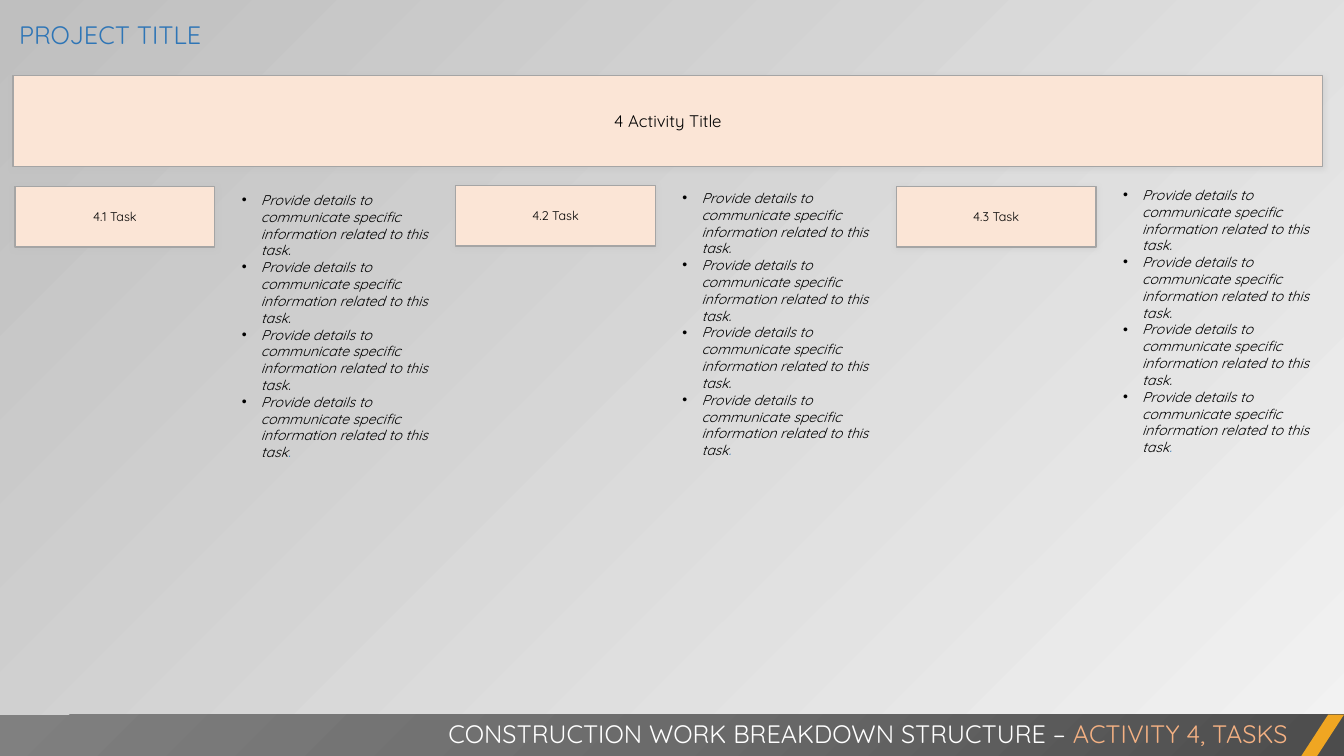
from lxml.etree import SubElement
from pptx import Presentation
from pptx.dml.color import RGBColor as RGB
from pptx.enum.shapes import MSO_SHAPE as Kind
from pptx.enum.text import MSO_ANCHOR as Anchor, MSO_AUTO_SIZE as Auto, PP_ALIGN as Align
from pptx.oxml import parse_xml
from pptx.oxml.ns import nsdecls, qn
from pptx.util import Inches, Pt

# Content
TITLE = "PROJECT TITLE"
ACTIVITY = "4 Activity Title"
DETAIL = "Provide details to communicate specific information related to this task"
COUNT = 4
TASKS = [  # label, box top, detail top
    ("4.1 Task", 1.85, 1.85),
    ("4.2 Task", 1.84, 1.83),
    ("4.3 Task", 1.85, 1.80),
]
FOOTER = [("CONSTRUCTION WORK BREAKDOWN STRUCTURE – ", "white"),
          ("ACTIVITY 4, TASKS", "peach")]

FONT = "Quicksand"
COLORS = {
    "black": "000000", "white": "FFFFFF", "blue": "2E75B6", "peach": "F4B183",
    "box": "FBE5D6", "edge": "A5A5A5", "shade": "BFBFBF", "light": "F2F2F2",
    "gold": "F0A622", "dark": "4C4C4C", "mid": "6B6B6B", "gray": "808080",
}
LEFT, STEP, GAP = 0.15, 4.37, 2.15
INDENT = 0.19


def color(name):
    return RGB.from_string(COLORS[name])


def write(shape, paras, size=10, align=Align.LEFT, italic=False, bullet=False):
    """Fill a shape with paragraphs, each a list of (text, color) runs."""
    frame = shape.text_frame
    frame.word_wrap = True
    for i, runs in enumerate(paras):
        para = frame.paragraphs[0] if i == 0 else frame.add_paragraph()
        para.alignment = align
        if bullet:
            props = para._p.get_or_add_pPr()
            props.set("marL", str(Inches(INDENT)))
            props.set("indent", str(-Inches(INDENT)))
            SubElement(props, qn("a:buFont")).set("typeface", "Arial")
            SubElement(props, qn("a:buChar")).set("char", "•")
        for text, name in runs:
            run = para.add_run()
            run.text = text
            run.font.size = Pt(size)
            run.font.name = FONT
            run.font.italic = italic
            run.font.color.rgb = color(name)


def label(slide, area, paras, **style):
    box = slide.shapes.add_textbox(*map(Inches, area))
    write(box, paras, **style)
    box.text_frame.auto_size = Auto.SHAPE_TO_FIT_TEXT


def block(slide, kind, area, fill):
    shape = slide.shapes.add_shape(kind, *map(Inches, area))
    shape.shadow.inherit = False
    shape.fill.solid()
    shape.fill.fore_color.rgb = color(fill)
    shape.line.fill.background()
    return shape


def card(slide, area, text, size):
    shape = block(slide, Kind.RECTANGLE, area, "box")
    shape.line.color.rgb = color("edge")
    shape.line.width = Pt(1)
    glow = SubElement(shape._element.spPr.find(qn("a:effectLst")), qn("a:outerShdw"),
                      blurRad=str(Pt(4)), dist=str(Pt(1)), dir="5400000",
                      algn="t", rotWithShape="0")
    tint = SubElement(glow, qn("a:srgbClr"), val=COLORS["shade"])
    SubElement(tint, qn("a:alpha"), val="40000")
    shape.text_frame.vertical_anchor = Anchor.MIDDLE
    write(shape, [[(text, "black")]], size=size, align=Align.CENTER)


def radial(shape, names):
    """Replace a solid fill by a gradient spreading from the lower right."""
    last = len(names) - 1
    stops = "".join(
        f'<a:gs pos="{100000 * i // last}"><a:srgbClr val="{COLORS[name]}"/></a:gs>'
        for i, name in enumerate(names))
    grad = parse_xml(
        f'<a:gradFill {nsdecls("a")} rotWithShape="1"><a:gsLst>{stops}</a:gsLst>'
        '<a:path path="circle"><a:fillToRect l="100000" t="100000"/></a:path>'
        '</a:gradFill>')
    props = shape._element.spPr
    props.replace(props.find(qn("a:solidFill")), grad)


def main():
    deck = Presentation()
    deck.slide_width, deck.slide_height = Inches(13.33), Inches(7.5)
    slide = deck.slides.add_slide(deck.slide_layouts[6])

    # Background
    back = slide.background.fill
    back.gradient()
    back.gradient_angle = 135
    for stop, name, place in zip(back.gradient_stops, ("light", "shade"), (0, 1)):
        stop.color.rgb = color(name)
        stop.position = place

    # Footer band
    band = block(slide, Kind.RECTANGLE, (0, 7.09, 13.33, 0.42), "gray")
    radial(band, ("dark", "mid", "gray"))
    slash = block(slide, Kind.PARALLELOGRAM, (12.9, 7.09, 0.43, 0.42), "gold")
    slash.adjustments[0] = 0.65
    label(slide, (2.97, 7.08, 9.9, 0.4), [FOOTER], size=18, align=Align.RIGHT)

    # Heading and activity
    label(slide, (0.09, 0.14, 10.11, 0.4), [[(TITLE, "blue")]], size=18)
    card(slide, (0.13, 0.75, 12.99, 0.9), ACTIVITY, 12)

    # Tasks with their details
    points = [[(DETAIL + ".", "black")]] * (COUNT - 1)
    points.append([(DETAIL, "black"), (".", "blue")])
    for i, (name, top, low) in enumerate(TASKS):
        left = LEFT + i * STEP
        card(slide, (left, top, 1.98, 0.6), name, 9)
        label(slide, (left + GAP, low, 2.06, 3), points, italic=True, bullet=True)

    deck.save("out.pptx")


if __name__ == "__main__":
    main()
